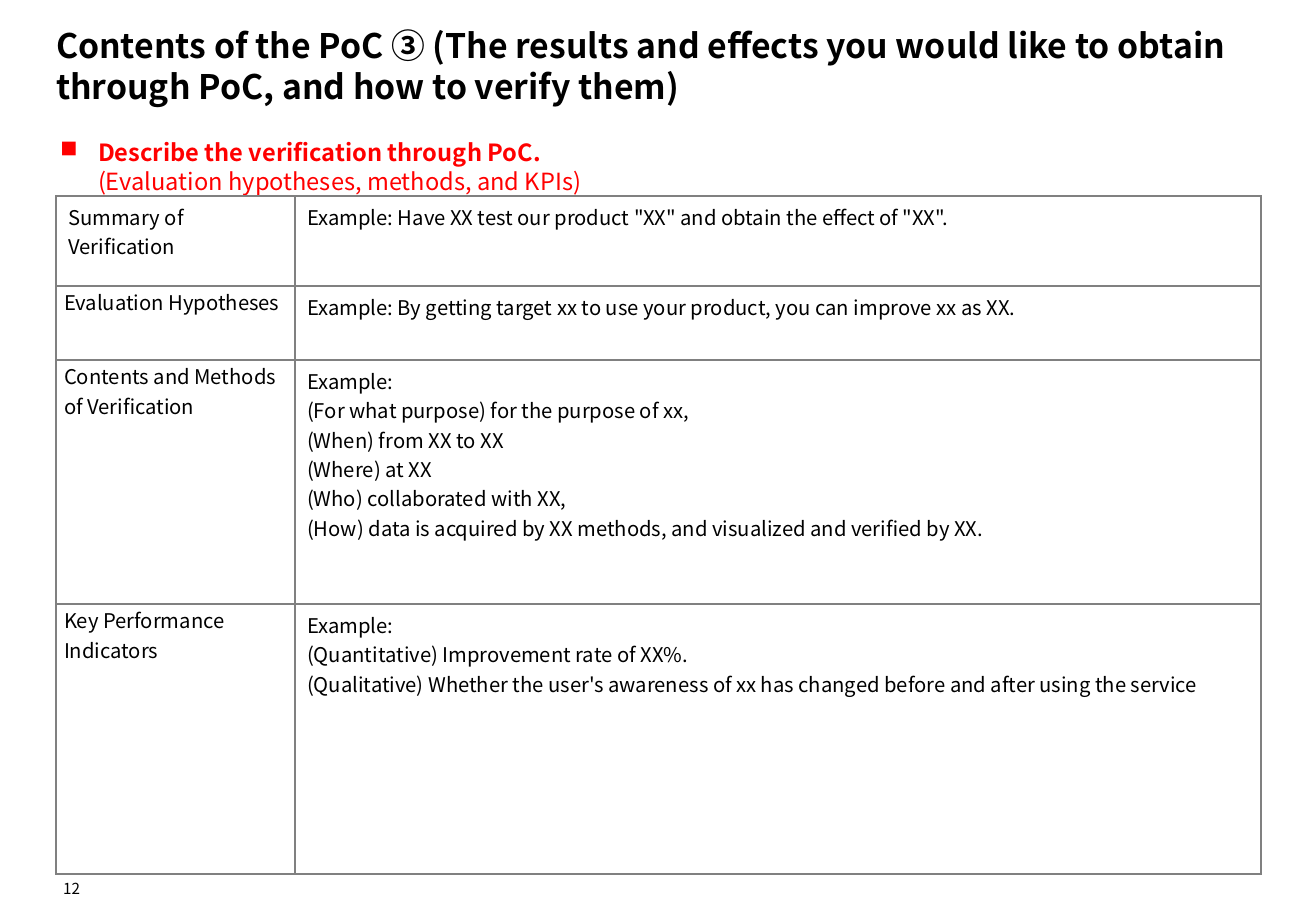
from lxml import etree
from pptx import Presentation, util as u
from pptx.dml.color import RGBColor
from pptx.enum import text as t
from pptx.oxml import ns

PX = 7526
BLACK = RGBColor(0, 0, 0)
RED = RGBColor(255, 0, 0)
WHITE = RGBColor(255, 255, 255)
GREY = "808080"
FONT = "Noto Sans CJK JP"

ROWS = [
    (90, ["Summary of Verification"],
     ['Example: Have XX test our product "XX" and obtain the effect of "XX".'], None),
    (74, ["Evaluation Hypotheses"],
     ["Example: By getting target xx to use your product, you can improve xx as XX."],
     dict(hang=18, align=t.PP_ALIGN.JUSTIFY, lead=18)),
    (244, ["Contents and Methods", "of Verification"],
     ["Example:",
      "(For what purpose) for the purpose of xx,",
      "(When) from XX to XX",
      "(Where) at XX",
      "(Who) collaborated with XX,",
      "(How) data is acquired by XX methods, and visualized and verified by XX."],
     dict(hang=18, lead=18)),
    (270, ["Key Performance Indicators"],
     ["Example:",
      "(Quantitative) Improvement rate of XX%.",
      "(Qualitative) Whether the user's awareness of xx has changed "
      "before and after using the service"],
     dict(lead=18)),
]


def px(num):
    return u.Emu(num * PX)


def sub(node, tag, **attrs):
    return etree.SubElement(node, ns.qn(tag), attrs)


def write(frame, paras, size=12, color=BLACK, bold=False, align=None,
          lead=None, hang=0, bullet=None):
    """Fill a frame; a line break inside a paragraph ends its bold part."""
    for i, words in enumerate(paras):
        para = frame.paragraphs[0] if i == 0 else frame.add_paragraph()
        props = para._p.get_or_add_pPr()
        if hang:
            props.set("marL", str(px(hang)))
            props.set("indent", str(px(-hang)))
        if bullet:
            sub(props, "a:buChar", char=bullet)
        if align is not None:
            para.alignment = align
        if lead:
            para.line_spacing = u.Pt(lead)
        for j, line in enumerate(words.split("\n")):
            if j:
                para.add_line_break()
            run = para.add_run()
            run.text = line
            font = run.font
            font.name, font.size = FONT, u.Pt(size)
            font.bold = bold and j == 0
            font.color.rgb = color
            sub(font._element, "a:ea", typeface=FONT)


class Page:
    """Holds the deck and its current slide."""

    def __init__(self, wide, high):
        self.deck = Presentation()
        self.deck.slide_width, self.deck.slide_height = px(wide), px(high)
        self.slide = self.deck.slides.add_slide(self.deck.slide_layouts[6])

    def label(self, box, words, pad=0, wrap=True,
              anchor=t.MSO_ANCHOR.BOTTOM, **style):
        frame = self.slide.shapes.add_textbox(*map(px, box)).text_frame
        frame.word_wrap = wrap
        frame.vertical_anchor = anchor
        frame.margin_left = frame.margin_right = px(pad)
        frame.margin_top = frame.margin_bottom = px(pad)
        write(frame, [words], **style)

    def cell(self, cell, paras, **style):
        write(cell.text_frame, paras, **style)
        props = cell._tc.get_or_add_tcPr()
        for side in ("a:lnL", "a:lnR", "a:lnT", "a:lnB"):
            line = sub(props, side, w=str(u.Pt(1)))
            sub(sub(line, "a:solidFill"), "a:srgbClr", val=GREY)
        cell.fill.solid()
        cell.fill.fore_color.rgb = WHITE

    def table(self, left, top, cols, rows):
        high = sum(row[0] for row in rows)
        grid = self.slide.shapes.add_table(
            len(rows), len(cols), px(left), px(top), px(sum(cols)), px(high)).table
        grid.first_row = grid.horz_banding = False
        for col, wide in zip(grid.columns, cols):
            col.width = px(wide)
        for i, (tall, head, body, style) in enumerate(rows):
            grid.rows[i].height = px(tall)
            first = grid.cell(i, 0)
            if style:
                first.margin_left = first.margin_right = px(8)
                first.margin_top = first.margin_bottom = 0
            self.cell(first, head, **(style or {}))
            self.cell(grid.cell(i, 1), body)


def main():
    page = Page(1316, 911)
    page.label((56, 875, 24, 23), "12", wrap=False, size=9, align=t.PP_ALIGN.RIGHT)
    page.label((56, 25, 1205, 81),
               "Contents of the PoC ③ (The results and effects you would like "
               "to obtain through PoC, and how to verify them)",
               size=20, bold=True, lead=24)
    page.label((55, 136, 1205, 61),
               "Describe the verification through PoC.\n"
               "(Evaluation hypotheses, methods, and KPIs)",
               pad=5, anchor=t.MSO_ANCHOR.MIDDLE, size=14, color=RED,
               bold=True, lead=17, hang=38, bullet="■")
    page.table(56, 196, (239, 966), ROWS)
    page.deck.save("out.pptx")


if __name__ == "__main__":
    main()
